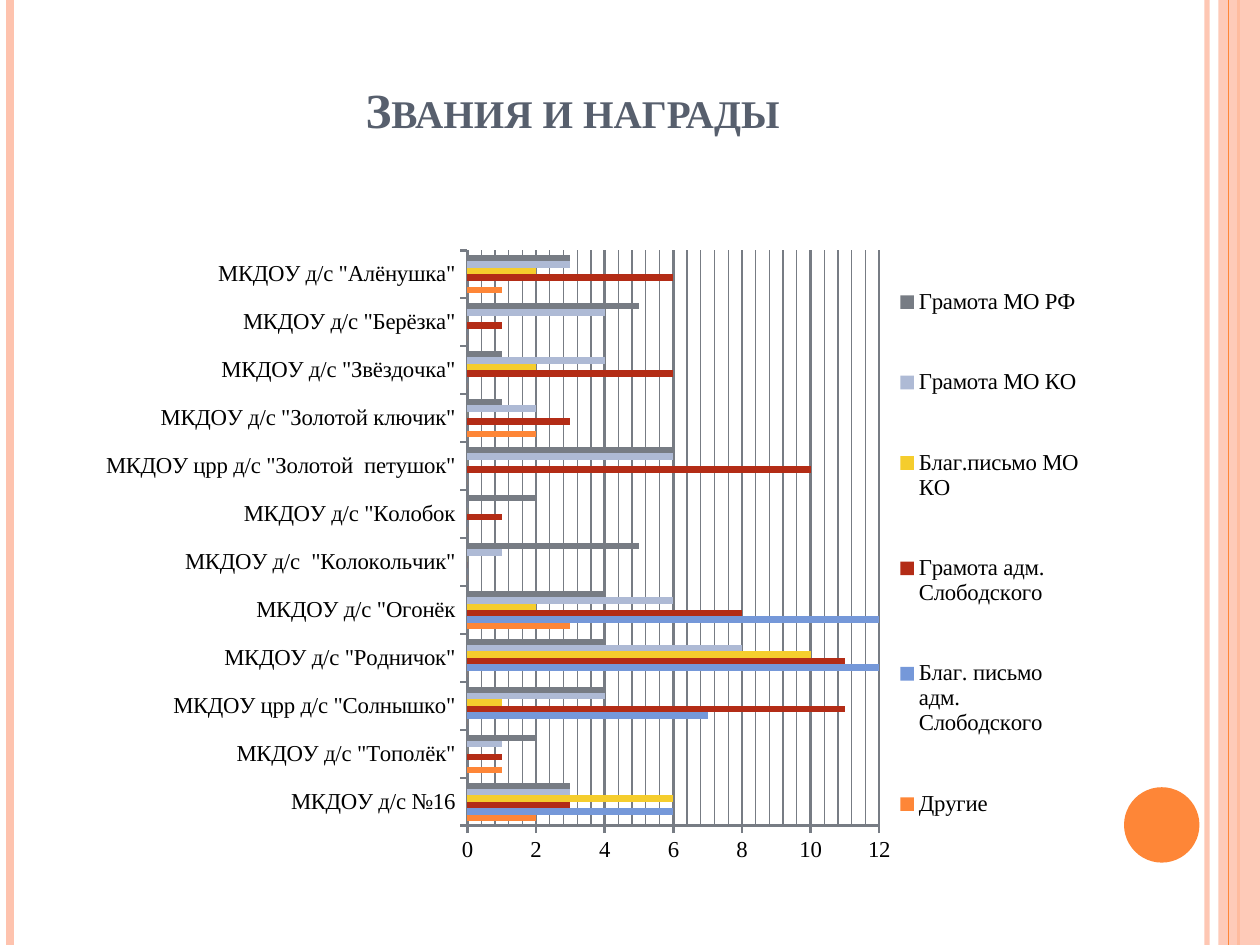
from lxml import etree
from pptx import Presentation
from pptx.chart.data import CategoryChartData
from pptx.dml.color import RGBColor
from pptx.enum.chart import XL_CHART_TYPE, XL_LEGEND_POSITION, XL_TICK_MARK
from pptx.enum.shapes import MSO_CONNECTOR, MSO_SHAPE
from pptx.enum.text import MSO_ANCHOR, PP_ALIGN
from pptx.oxml import parse_xml
from pptx.oxml.ns import nsdecls, qn
from pptx.util import Cm, Pt

BAR = XL_CHART_TYPE.BAR_CLUSTERED
RIGHT = XL_LEGEND_POSITION.RIGHT
OUTSIDE = XL_TICK_MARK.OUTSIDE
STRAIGHT = MSO_CONNECTOR.STRAIGHT
RECT, OVAL = MSO_SHAPE.RECTANGLE, MSO_SHAPE.OVAL
BOTTOM, CENTER = MSO_ANCHOR.BOTTOM, PP_ALIGN.CENTER

FONT = "Times New Roman"
PEACH, ORANGE, SLATE, GREY = "FEC3AE", "FE8637", "575F6D", "777C84"
SLIDE_W, SLIDE_H = 25.4, 19.05

CATEGORIES = [
    'МКДОУ д/с №16', 'МКДОУ д/с "Тополёк"', 'МКДОУ црр д/с "Солнышко"',
    'МКДОУ д/с "Родничок"', 'МКДОУ д/с "Огонёк', 'МКДОУ д/с  "Колокольчик"',
    'МКДОУ д/с "Колобок', 'МКДОУ црр д/с "Золотой  петушок"',
    'МКДОУ д/с "Золотой ключик"', 'МКДОУ д/с "Звёздочка"',
    'МКДОУ д/с "Берёзка"', 'МКДОУ д/с "Алёнушка"',
]
SERIES = [
    ("Другие", ORANGE, (2, 1, 0, 0, 3, 0, 0, 0, 2, 0, 0, 1)),
    ("Благ. письмо адм. Слободского", "7598D9", (6, 0, 7, 12, 12, 0, 0, 0, 0, 0, 0, 0)),
    ("Грамота адм. Слободского", "B32C16", (3, 1, 11, 11, 8, 0, 1, 10, 3, 6, 1, 6)),
    ("Благ.письмо МО КО ", "F5CD2D", (6, 0, 1, 10, 2, 0, 0, 0, 0, 2, 0, 2)),
    ("Грамота МО КО", "AEBAD5", (3, 1, 4, 8, 6, 1, 0, 6, 2, 4, 4, 3)),
    ("Грамота МО РФ", GREY, (3, 2, 4, 4, 4, 5, 2, 6, 1, 1, 5, 3)),
]


def rgb(value):
    return RGBColor.from_string(value)


def set_alpha(fill_parent, percent):
    color = next(fill_parent.iter(qn("a:srgbClr")))
    etree.SubElement(color, qn("a:alpha"), val=str(percent * 1000))


def add_shape(s, kind, x, y, w, h, color):
    sp = s.shapes.add_shape(kind, Cm(x), Cm(y), Cm(w), Cm(h))
    sp.shadow.inherit = False
    sp.fill.solid()
    sp.fill.fore_color.rgb = rgb(color)
    sp.line.fill.background()
    return sp


def add_stripe(s, x, y, h, color, width):
    line = s.shapes.add_connector(STRAIGHT, Cm(x), Cm(y), Cm(x), Cm(y + h))
    line.line.color.rgb = rgb(color)
    line.line.width = Pt(width)
    etree.SubElement(line._element.spPr, qn("a:effectLst"))
    return line


def add_frame(s, x, y, w, h):
    """Side stripes, right band and circle."""
    right = x + w
    set_alpha(add_stripe(s, right - 1.07, y, h, PEACH, 3)._element.spPr, 93)
    add_stripe(s, x + 0.21, y, h, PEACH, 4.5)
    add_stripe(s, right - 0.43, y, h, ORANGE, 1.5)
    band = add_shape(s, RECT, right - 0.84, y, 0.84, h, PEACH)
    set_alpha(band._element.spPr, 87)
    add_stripe(s, right - 0.64, y, h, ORANGE, 0.75)
    add_shape(s, OVAL, right - 2.74, y + h - 3.18, 1.52, 1.52, ORANGE)


def add_title(s, x, y, w, h, text):
    tf = s.shapes.add_textbox(Cm(x), Cm(y), Cm(w), Cm(h)).text_frame
    tf.word_wrap = True
    tf.vertical_anchor = BOTTOM
    p = tf.paragraphs[0]
    p.alignment = CENTER
    p.font.name, p.font.size, p.font.bold = FONT, Pt(28), True
    p.font.color.rgb = rgb(SLATE)
    r = p.add_run()
    r.text = text
    r._r.get_or_add_rPr().set("cap", "small")


def manual_layout(x, y, w, h, inner=False):
    """Layout element in fractions of the chart area."""
    target = '<c:layoutTarget val="inner"/>' if inner else ""
    sizes = "".join(f'<c:{tag} val="{value}"/>'
                    for tag, value in zip("xywh", (x, y, w, h)))
    return parse_xml(
        f'<c:layout {nsdecls("c")}><c:manualLayout>{target}'
        f'<c:xMode val="edge"/><c:yMode val="edge"/>{sizes}'
        '</c:manualLayout></c:layout>')


def style_axis(axis):
    axis.major_tick_mark = OUTSIDE
    axis.format.line.color.rgb = rgb(GREY)
    axis.format.line.width = Pt(1.5)


def add_awards_chart(s, x, y, w, h):
    data = CategoryChartData()
    data.categories = CATEGORIES
    for name, _, values in SERIES:
        data.add_series(name, values)
    chart = s.shapes.add_chart(BAR, Cm(x), Cm(y), Cm(w), Cm(h), data).chart
    chart.has_title = False
    chart.font.name, chart.font.size = FONT, Pt(13)
    chart.font.color.rgb = rgb("000000")

    # Bars
    plot = chart.plots[0]
    plot.gap_width = 150
    plot.vary_by_categories = False
    for series, (_, color, _) in zip(plot.series, SERIES):
        series.format.fill.solid()
        series.format.fill.fore_color.rgb = rgb(color)

    # Axes and gridlines
    style_axis(chart.category_axis)
    axis = chart.value_axis
    style_axis(axis)
    axis.minimum_scale, axis.maximum_scale = 0, 12
    axis.major_unit, axis.minor_unit = 2, 0.4
    axis.has_major_gridlines = axis.has_minor_gridlines = True
    axis.major_gridlines.format.line.color.rgb = rgb(GREY)
    axis.major_gridlines.format.line.width = Pt(1.5)
    minor = axis._element.find(qn("c:minorGridlines"))
    minor.append(parse_xml(
        f'<c:spPr {nsdecls("c", "a")}><a:ln w="9525"><a:solidFill>'
        f'<a:srgbClr val="{GREY}"/></a:solidFill></a:ln></c:spPr>'))

    # Legend and plot placement
    chart.has_legend = True
    legend = chart.legend
    legend.position = RIGHT
    legend.include_in_layout = False
    for old in legend._element.findall(qn("c:layout")):
        legend._element.remove(old)
    legend._element.find(qn("c:legendPos")).addnext(
        manual_layout(0.81, 0.02, 0.18, 0.95))
    area = chart._chartSpace.chart.plotArea
    for old in area.findall(qn("c:layout")):
        area.remove(old)
    area.insert(0, manual_layout(0.393, 0.044, 0.4, 0.857, inner=True))


def main():
    prs = Presentation()
    prs.slide_width, prs.slide_height = Cm(SLIDE_W), Cm(SLIDE_H)
    s = prs.slides.add_slide(prs.slide_layouts[6])
    add_frame(s, 0, 0, SLIDE_W, SLIDE_H)
    add_title(s, 1.27, 0.76, 20.75, 2.16, "Звания и награды ")
    add_awards_chart(s, 1.27, 4.45, 20.75, 13.54)
    prs.save("out.pptx")


if __name__ == "__main__":
    main()
